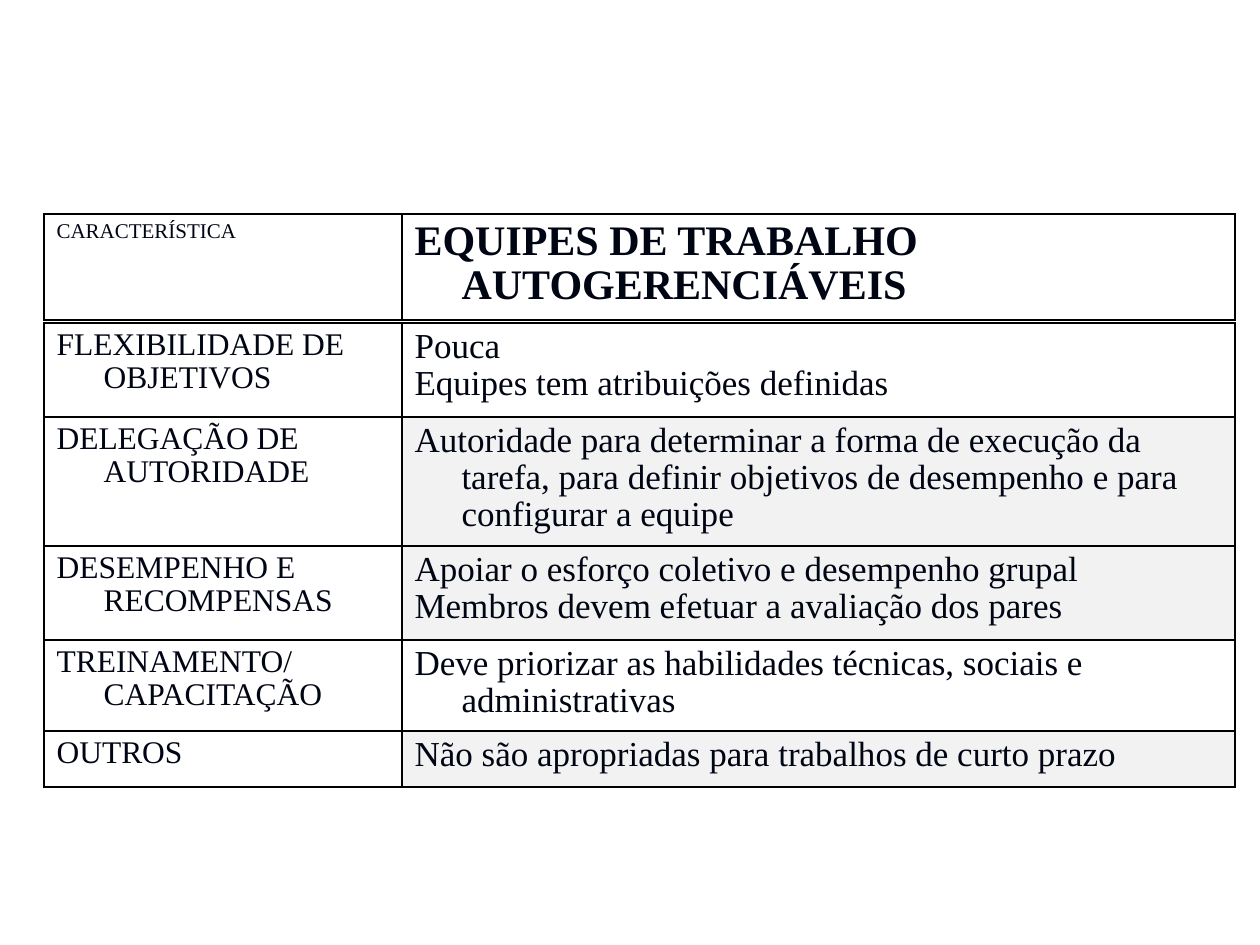
from lxml import etree
from pptx import Presentation
from pptx.dml.color import RGBColor
from pptx.oxml.ns import qn
from pptx.util import Emu, Pt

EMU_PER_PX = 914400 / 126
INK = RGBColor(0x00, 0x05, 0x14)
BORDER = RGBColor(0x00, 0x00, 0x00)
WHITE = RGBColor(0xFF, 0xFF, 0xFF)
SHADE = RGBColor(0xF2, 0xF2, 0xF2)
FONT = "Times New Roman"
COLUMN_WIDTHS = (358, 833)
HANGING_INDENT = 47

HEADINGS = ("CARACTERÍSTICA", "EQUIPES DE TRABALHO AUTOGERENCIÁVEIS")
CHARACTERISTICS = [
    (94, "FLEXIBILIDADE DE OBJETIVOS",
     ["Pouca", "Equipes tem atribuições definidas"], WHITE),
    (129, "DELEGAÇÃO DE AUTORIDADE",
     ["Autoridade para determinar a forma de execução da tarefa, para definir "
      "objetivos de desempenho e para configurar a equipe"], SHADE),
    (94, "DESEMPENHO E RECOMPENSAS",
     ["Apoiar o esforço coletivo e desempenho grupal",
      "Membros devem efetuar a avaliação dos pares"], SHADE),
    (91, "TREINAMENTO/CAPACITAÇÃO",
     ["Deve priorizar as habilidades técnicas, sociais e administrativas"], WHITE),
    (56, "OUTROS",
     ["Não são apropriadas para trabalhos de curto prazo"], SHADE),
]


def px(length):
    return Emu(round(length * EMU_PER_PX))


def draw_borders(cell):
    properties = cell._tc.get_or_add_tcPr()
    for position, side in enumerate(("a:lnL", "a:lnR", "a:lnT", "a:lnB")):
        edge = etree.Element(qn(side), w=str(Pt(1)))
        fill = etree.SubElement(edge, qn("a:solidFill"))
        etree.SubElement(fill, qn("a:srgbClr"), val=str(BORDER))
        properties.insert(position, edge)


def fill_cell(cell, lines, size, background=WHITE, bold=False):
    cell.fill.solid()
    cell.fill.fore_color.rgb = background
    draw_borders(cell)
    frame = cell.text_frame
    for index, line in enumerate(lines):
        paragraph = frame.add_paragraph() if index else frame.paragraphs[0]
        paragraph.line_spacing = 0.95
        properties = paragraph._p.get_or_add_pPr()
        properties.set("marL", str(px(HANGING_INDENT)))
        properties.set("indent", str(-px(HANGING_INDENT)))
        run = paragraph.add_run()
        run.text = line
        run.font.name = FONT
        run.font.size = Pt(size)
        run.font.bold = bold
        run.font.color.rgb = INK


def add_grid(slide, left, top, row_heights):
    table = slide.shapes.add_table(
        len(row_heights), len(COLUMN_WIDTHS), px(left), px(top),
        px(sum(COLUMN_WIDTHS)), px(sum(row_heights))).table
    table.first_row = False
    table.horz_banding = False
    for column, width in zip(table.columns, COLUMN_WIDTHS):
        column.width = px(width)
    for row, height in zip(table.rows, row_heights):
        row.height = px(height)
    return table


def add_heading_table(slide, left, top, height):
    table = add_grid(slide, left, top, [height])
    characteristic, teams = HEADINGS
    fill_cell(table.cell(0, 0), [characteristic], 12)
    fill_cell(table.cell(0, 1), [teams], 24, bold=True)


def add_characteristics_table(slide, left, top):
    table = add_grid(slide, left, top, [entry[0] for entry in CHARACTERISTICS])
    for row, (_, characteristic, description, background) in enumerate(CHARACTERISTICS):
        fill_cell(table.cell(row, 0), [characteristic], 18)
        fill_cell(table.cell(row, 1), description, 20, background)


def main():
    presentation = Presentation()
    presentation.slide_width = px(1260)
    presentation.slide_height = px(945)
    slide = presentation.slides.add_slide(presentation.slide_layouts[6])
    add_characteristics_table(slide, 44, 323)
    add_heading_table(slide, 44, 214, 106)
    presentation.save("out.pptx")


if __name__ == "__main__":
    main()
